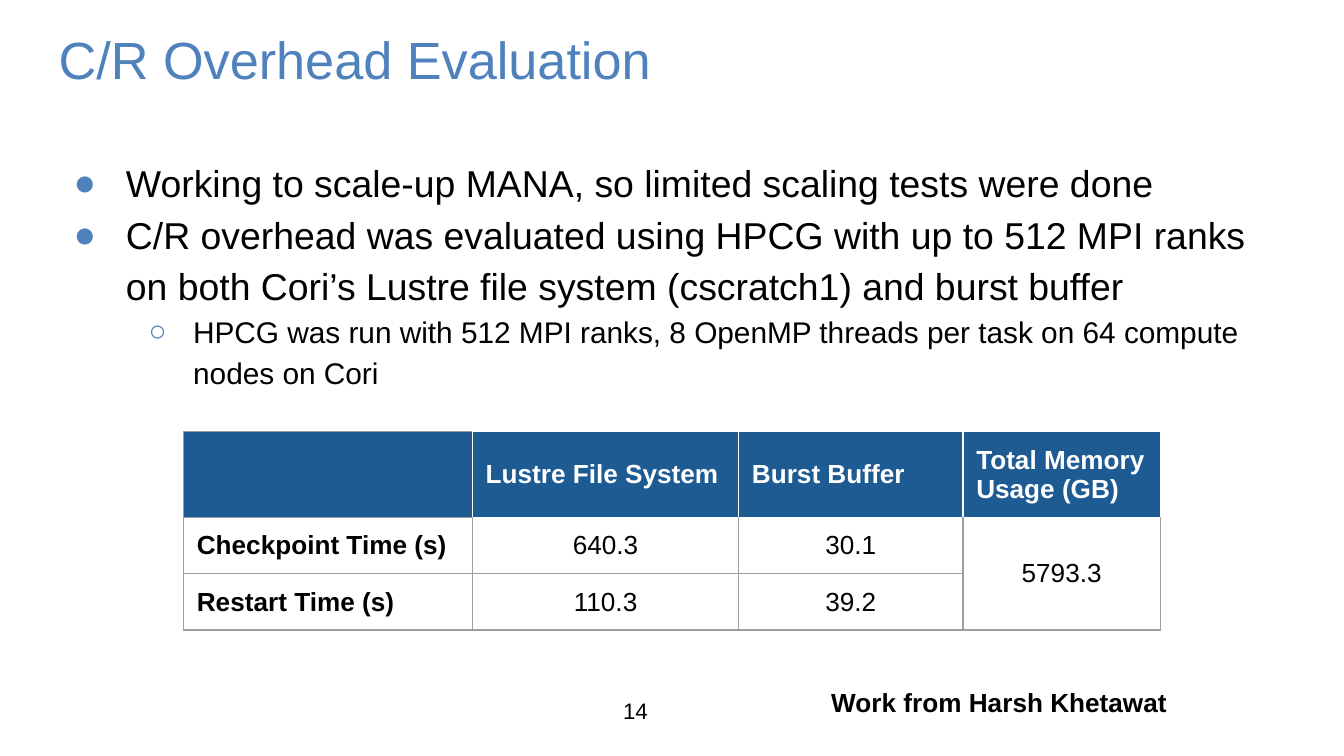
"""Build the slide on checkpoint and restart overhead."""
from dataclasses import dataclass

from lxml import etree
from pptx import Presentation
from pptx.dml.color import RGBColor
from pptx.enum import shapes, text
from pptx.oxml.ns import qn
from pptx.util import Cm, Pt

LEFT, MID = text.PP_ALIGN.LEFT, text.PP_ALIGN.CENTER


@dataclass(frozen=True)
class Theme:
    """Colours and type sizes."""
    font: str = "Arial"
    blue: str = "4F81BD"
    navy: str = "1F5B93"
    black: str = "000000"
    white: str = "FFFFFF"
    grey: str = "9E9E9E"
    title: int = 28
    body: int = 20
    sub: int = 16
    cell: int = 14
    page: int = 12
    rule: float = 0.75


@dataclass(frozen=True)
class Point:
    """A bulleted line of the list."""
    words: str
    level: int
    mark: str
    size: int
    left: float
    hang: float


@dataclass(frozen=True)
class Box:
    """A place on the slide in centimetres."""
    x: float
    y: float
    w: float
    h: float

    def fit(self, shape) -> None:
        """Move a shape to this place."""
        for name, size in {"left": self.x, "top": self.y,
                           "width": self.w, "height": self.h}.items():
            setattr(shape, name, Cm(size))


T = Theme()
POINTS = (
    Point("Working to scale-up MANA, so limited scaling tests were done",
          0, "●", T.body, 1.27, 0.99),
    Point("C/R overhead was evaluated using HPCG with up to 512 MPI ranks on both "
          "Cori’s Lustre file system (cscratch1) and burst buffer",
          0, "●", T.body, 1.27, 0.99),
    Point("HPCG was run with 512 MPI ranks, 8 OpenMP threads per task on 64 compute "
          "nodes on Cori", 1, "○", T.sub, 2.54, 0.84),
)
ROWS = (
    ("", "Lustre File System", "Burst Buffer", "Total Memory Usage (GB)"),
    ("Checkpoint Time (s)", "640.3", "30.1", "5793.3"),
    ("Restart Time (s)", "110.3", "39.2", ""),
)
WIDTHS = (5.46, 5.03, 4.24, 3.73)
HEIGHTS = (1.63, 1.06, 1.06)


def frame(area, pad: float = 0, **extra) -> None:
    """Set insets, wrapping and anchor of a text frame."""
    form = {f"margin_{side}": Cm(pad) for side in ("left", "top", "right", "bottom")}
    form |= {"word_wrap": True, "auto_size": text.MSO_AUTO_SIZE.NONE,
             "vertical_anchor": text.MSO_ANCHOR.MIDDLE}
    for name, value in (form | extra).items():
        setattr(area, name, value)


def write(para, words: str, size: int, tint: str, bold: bool = False, align=LEFT) -> None:
    """Add one formatted run to a paragraph."""
    para.alignment = align
    run = para.add_run()
    run.text = words
    for name, value in {"name": T.font, "size": Pt(size), "bold": bold}.items():
        setattr(run.font, name, value)
    run.font.color.rgb = RGBColor.from_string(tint)


def bullet(para, item: Point) -> None:
    """Give a paragraph its indent and coloured bullet."""
    para.level = item.level
    props = para._p.get_or_add_pPr()
    props.set("marL", str(Cm(item.left)))
    props.set("indent", str(-Cm(item.hang)))
    tint = etree.SubElement(props, qn("a:buClr"))
    etree.SubElement(tint, qn("a:srgbClr"), val=T.blue)
    etree.SubElement(props, qn("a:buFont"), typeface=T.font)
    etree.SubElement(props, qn("a:buChar"), char=item.mark)
    for name, value in {"line_spacing": 1.15, "space_before": Pt(0),
                        "space_after": Pt(0)}.items():
        setattr(para, name, value)


def border(cell, row: int, col: int) -> None:
    """Draw the four edges of a cell."""
    props = cell._tc.get_or_add_tcPr()
    for side in "LRTB":
        head = row == 0 and (col > 0 or side == "R")
        under = row == 1 and col > 0 and side == "T"
        line = etree.SubElement(props, qn(f"a:ln{side}"), w=str(Pt(T.rule)))
        fill = etree.SubElement(line, qn("a:solidFill"))
        etree.SubElement(fill, qn("a:srgbClr"), val=T.white if head or under else T.grey)


def grid(slide, place: Box) -> None:
    """Draw the table of times and memory."""
    table = slide.shapes.add_table(len(ROWS), len(WIDTHS), Cm(place.x), Cm(place.y),
                                   Cm(place.w), Cm(place.h)).table
    table.horz_banding = False
    for col, width in zip(table.columns, WIDTHS):
        col.width = Cm(width)
    for row, height in zip(table.rows, HEIGHTS):
        row.height = Cm(height)
    for r, row in enumerate(ROWS):
        for c, words in enumerate(row):
            cell = table.cell(r, c)
            border(cell, r, c)
            for side in ("left", "top", "right", "bottom"):
                setattr(cell, f"margin_{side}", Cm(0.25))
            cell.vertical_anchor = text.MSO_ANCHOR.MIDDLE
            if r:
                cell.fill.background()
            else:
                cell.fill.solid()
                cell.fill.fore_color.rgb = RGBColor.from_string(T.navy)
            if words:
                write(cell.text_frame.paragraphs[0], words, T.cell,
                      T.black if r else T.white, r == 0 or c == 0,
                      MID if r and c else LEFT)
    table.cell(1, 3).merge(table.cell(2, 3))


def main() -> None:
    """Build and save the slide."""
    deck = Presentation()
    deck.slide_width, deck.slide_height = Cm(25.4), Cm(14.28)
    slide = deck.slides.add_slide(deck.slide_layouts[1])
    title, body = slide.placeholders

    Box(1.11, 0.43, 23.01, 1.37).fit(title)
    frame(title.text_frame)
    write(title.text_frame.paragraphs[0], "C/R Overhead Evaluation", T.title, T.blue)

    Box(1.11, 2.9, 23.01, 9.8).fit(body)
    frame(body.text_frame, vertical_anchor=text.MSO_ANCHOR.TOP)
    for i, item in enumerate(POINTS):
        para = body.text_frame.add_paragraph() if i else body.text_frame.paragraphs[0]
        bullet(para, item)
        write(para, item.words, item.size, T.black)

    page = slide.shapes.add_textbox(Cm(9.09), Cm(13.16), Cm(5.84), Cm(0.51))
    frame(page.text_frame)
    write(page.text_frame.paragraphs[0], "14", T.page, T.black, align=MID)

    note = slide.shapes.add_shape(shapes.MSO_SHAPE.RECTANGLE,
                                  Cm(14.91), Cm(12.7), Cm(9.68), Cm(1.12))
    note.shadow.inherit = False
    note.fill.solid()
    note.fill.fore_color.rgb = RGBColor.from_string(T.white)
    note.line.fill.background()
    frame(note.text_frame, 0.25, margin_left=Cm(0.8))
    write(note.text_frame.paragraphs[0], "Work from Harsh Khetawat", T.cell, T.black, True)

    grid(slide, Box(3.47, 8.15, sum(WIDTHS), sum(HEIGHTS)))
    deck.save("out.pptx")


if __name__ == "__main__":
    main()
